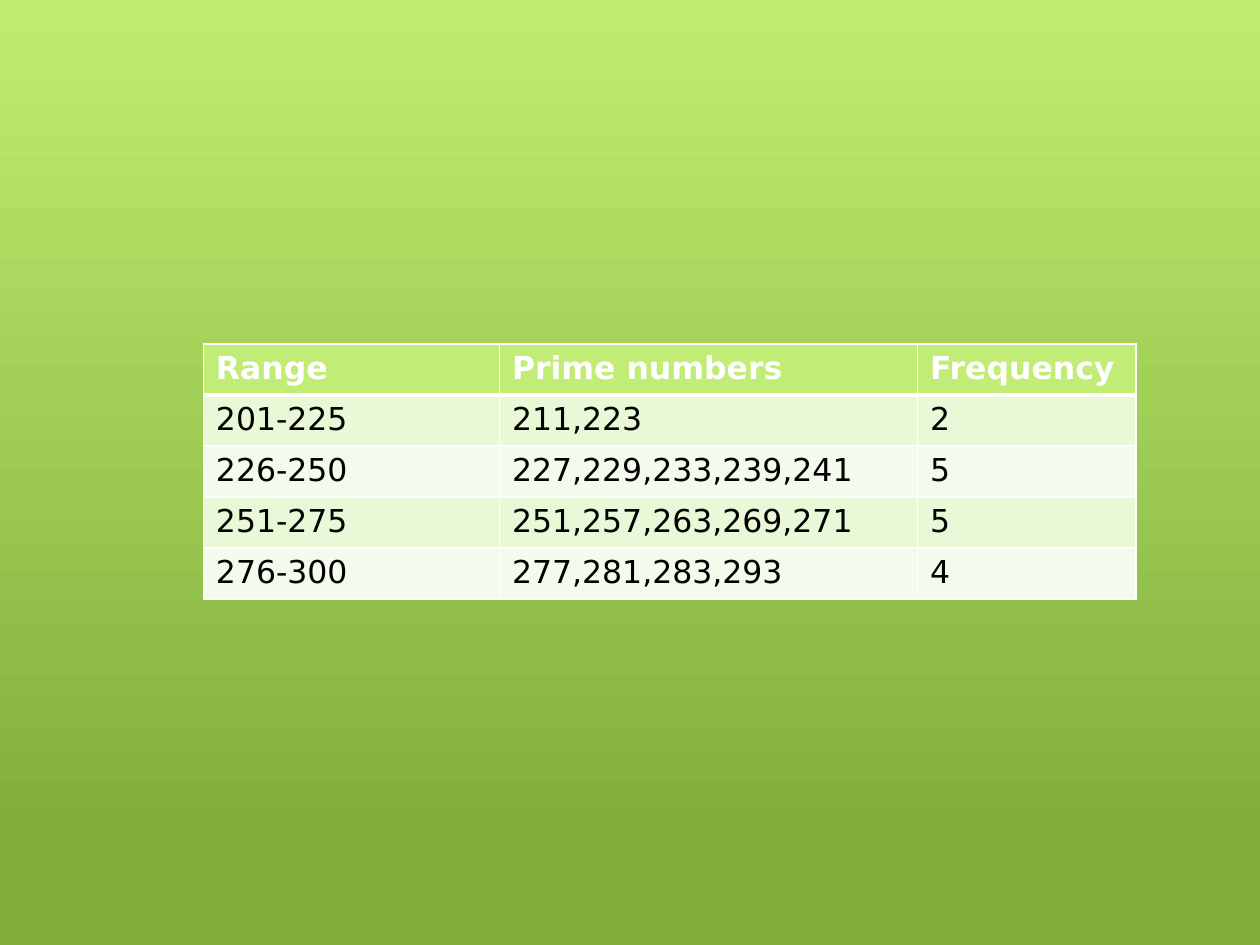
from lxml import etree
from pptx import Presentation
from pptx import util as u
from pptx.dml.color import RGBColor
from pptx.oxml.ns import qn

WHITE = RGBColor(0xFF, 0xFF, 0xFF)
BLACK = RGBColor(0x00, 0x00, 0x00)
BG_TOP = RGBColor(0xBF, 0xEE, 0x6F)
BG_BOTTOM = RGBColor(0x82, 0xAE, 0x3C)
HEADER = RGBColor(0xC1, 0xEC, 0x76)
BANDS = (RGBColor(0xE9, 0xF8, 0xD6), RGBColor(0xF4, 0xFB, 0xEC))
FONT = "DejaVu Sans"

COL_WIDTHS = (5.97, 8.43, 4.4)
ROW_HEIGHT = 1.03
ROWS = (
    ("Range", "Prime numbers", "Frequency"),
    ("201-225", "211,223", "2"),
    ("226-250", "227,229,233,239,241", "5"),
    ("251-275", "251,257,263,269,271", "5"),
    ("276-300", "277,281,283,293", "4"),
)


def paint_background(s):
    fill = s.background.fill
    fill.gradient()
    fill.gradient_angle = 270
    for stop, position, color in zip(fill.gradient_stops, (0, 0.88), (BG_TOP, BG_BOTTOM)):
        stop.position = position
        stop.color.rgb = color


def set_borders(cell, widths):
    """Draw white cell borders; widths maps each side (L, R, T, B) to points."""
    tc_pr = cell._tc.get_or_add_tcPr()
    for side, width in widths.items():
        ln = etree.SubElement(tc_pr, qn(f"a:ln{side}"), w=str(u.Pt(width)))
        fill = etree.SubElement(ln, qn("a:solidFill"))
        etree.SubElement(fill, qn("a:srgbClr"), val=str(WHITE))


def format_cell(cell, value, row):
    is_header = row == 0
    set_borders(cell, {"L": 1, "R": 1, "T": 3 if row == 1 else 1, "B": 3 if is_header else 1})
    cell.fill.solid()
    cell.fill.fore_color.rgb = HEADER if is_header else BANDS[(row - 1) % 2]
    r = cell.text_frame.paragraphs[0].add_run()
    r.text = value
    r.font.name = FONT
    r.font.size = u.Pt(18)
    r.font.bold = is_header
    r.font.color.rgb = WHITE if is_header else BLACK


def add_prime_table(s, left, top, width, height):
    table = s.shapes.add_table(len(ROWS), len(COL_WIDTHS), left, top, width, height).table
    for column, share in zip(table.columns, COL_WIDTHS):
        column.width = int(width * share / sum(COL_WIDTHS))
    for i, values in enumerate(ROWS):
        table.rows[i].height = height // len(ROWS)
        for j, value in enumerate(values):
            format_cell(table.cell(i, j), value, i)


def main():
    prs = Presentation()
    prs.slide_width, prs.slide_height = u.Cm(25.4), u.Cm(19.05)
    s = prs.slides.add_slide(prs.slide_layouts[6])
    paint_background(s)
    add_prime_table(s, u.Cm(4.1), u.Cm(6.93),
                    u.Cm(sum(COL_WIDTHS)), u.Cm(ROW_HEIGHT * len(ROWS)))
    prs.save("out.pptx")


if __name__ == "__main__":
    main()
